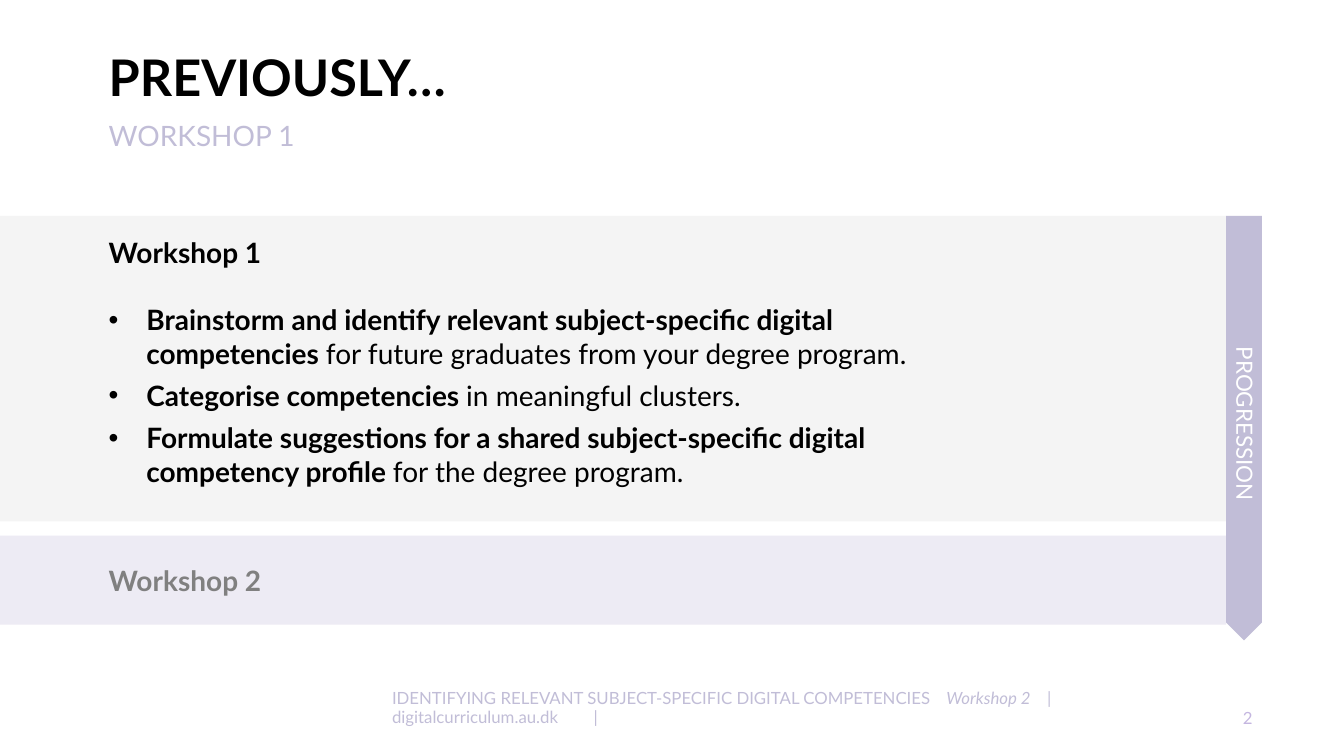
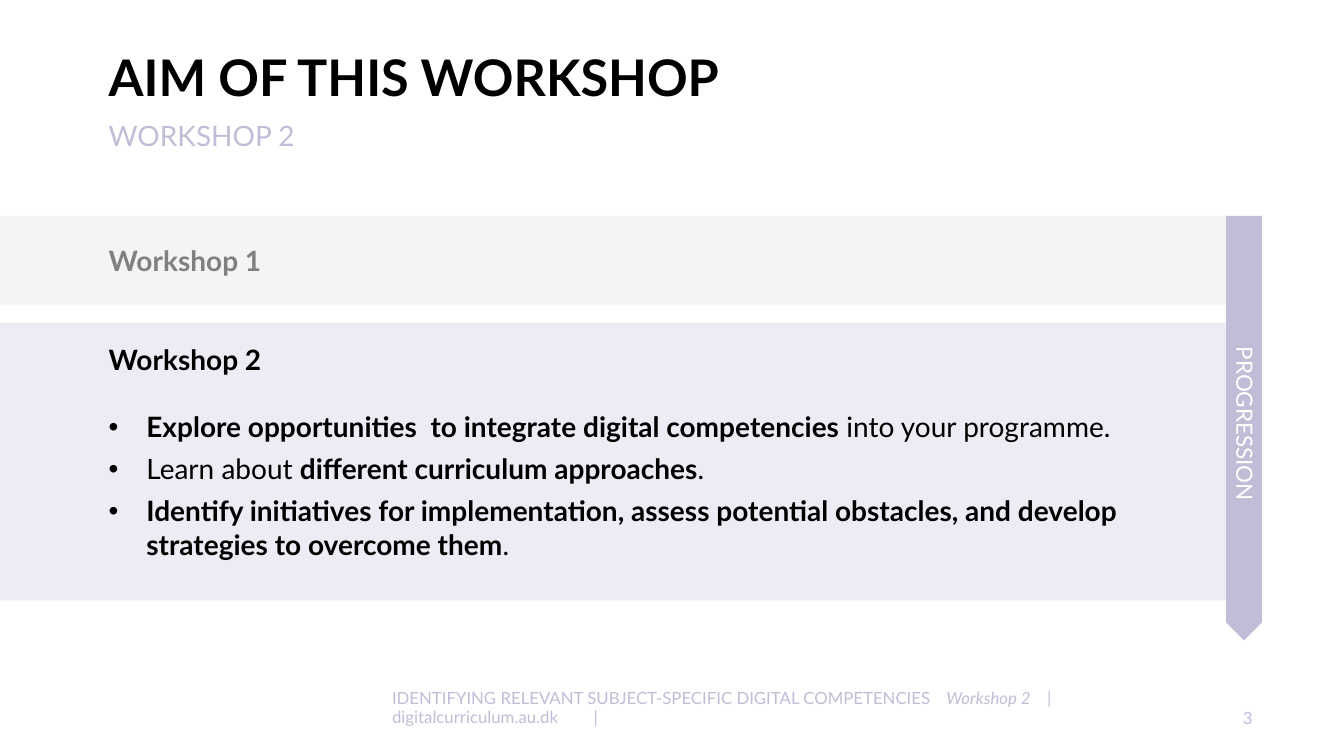
from lxml import etree
from pptx import Presentation
from pptx.dml.color import RGBColor
from pptx.enum import shapes, text
from pptx.oxml.ns import qn
from pptx.util import Cm, Pt

FONT = "Lato"
BLACK, WHITE, MUTED = "000000", "FFFFFF", "808080"
LILAC, NUMBER_LILAC = "C1BDD7", "C4B6E0"
BAND_FILLS = ["F4F4F4", "EDEBF4"]
MARGIN, CONTENT_WIDTH = 2.74, 28.4
BANDS_TOP, BANDS_WIDTH, CLOSED_HEIGHT = 5.44, 30.9, 2.24
BAND_INSET, BULLET_HANG = 0.8, 0.95
ARROW_LENGTH, ARROW_THICKNESS = 10.7, 0.9
FOOTER_LEFT, FOOTER_BOTTOM, FOOTER_HEIGHT = 9.88, 18.34, 0.5
FOOTER_TABS = [13.81, 16.3, 16.75, 21.13]


def write(frame, runs, size=20, color=BLACK, first=False, align="LEFT",
          spacing=None, before=0, after=0, indent=0, bullet=False, tabs=()):
    paragraph = frame.paragraphs[0] if first else frame.add_paragraph()
    properties = paragraph._p.get_or_add_pPr()
    properties.set("marL", str(Cm(indent + bullet * BULLET_HANG)))
    properties.set("indent", str(-Cm(bullet * BULLET_HANG)))
    if bullet:
        etree.SubElement(properties, qn("a:buFont"), typeface="Arial")
        etree.SubElement(properties, qn("a:buChar"), char="•")
    if tabs:
        stops = etree.SubElement(properties, qn("a:tabLst"))
        for stop in tabs:
            etree.SubElement(stops, qn("a:tab"), pos=str(Cm(stop)), algn="l")
    paragraph.alignment = getattr(text.PP_ALIGN, align)
    paragraph.line_spacing = spacing
    paragraph.space_before, paragraph.space_after = Pt(before), Pt(after)
    for words, style in runs:
        run = paragraph.add_run()
        run.text = words
        run.font.name, run.font.size = FONT, Pt(size)
        run.font.color.rgb = RGBColor.from_string(color)
        run.font.bold, run.font.italic = style == "bold", style == "italic"


def place(slide, left, top, width, height, kind=None, fill=None, anchor="BOTTOM"):
    box = [Cm(length) for length in (left, top, width, height)]
    if kind is None:
        part = slide.shapes.add_textbox(*box)
    else:
        part = slide.shapes.add_shape(kind, *box)
        part.shadow.inherit = False
        part.fill.solid()
        part.fill.fore_color.rgb = RGBColor.from_string(fill)
        part.line.fill.background()
    frame = part.text_frame
    frame.word_wrap = True
    frame.vertical_anchor = getattr(text.MSO_ANCHOR, anchor)
    frame.margin_left = frame.margin_right = frame.margin_top = frame.margin_bottom = 0
    return part


workshops = [
    {
        "title": "PREVIOUSLY…", "open_height": 7.7, "gap": 0.36, "right_inset": 7,
        "goals": [
            [("Brainstorm and identify relevant subject-specific digital competencies ", "bold"),
             ("for future graduates from your degree program.", "")],
            [("Categorise competencies ", "bold"), ("in meaningful clusters.", "")],
            [("Formulate suggestions for a shared subject-specific digital competency profile ", "bold"),
             ("for the degree program.", "")],
        ],
    },
    {
        "title": "AIM OF THIS WORKSHOP", "open_height": 7, "gap": 0.45, "right_inset": 0.5,
        "goals": [
            [("Explore opportunities  to integrate digital competencies ", "bold"),
             ("into your programme.", "")],
            [("Learn about ", ""), ("different curriculum approaches", "bold"), (".", "")],
            [("Identify initiatives for implementation, assess potential obstacles, "
              "and develop strategies to overcome them", "bold"), (".", "")],
        ],
    },
]

deck = Presentation()
deck.slide_width, deck.slide_height = Cm(33.87), Cm(19.05)

for current, workshop in enumerate(workshops):
    slide = deck.slides.add_slide(deck.slide_layouts[6])

    heading = place(slide, MARGIN, 0.89, CONTENT_WIDTH, 2.95).text_frame
    write(heading, [(workshop["title"], "bold")], size=36, first=True, spacing=0.89)
    write(heading, [(f"WORKSHOP {current + 1}", "")], color=LILAC, spacing=0.89, before=11)

    band_top = BANDS_TOP
    for number, fill in enumerate(BAND_FILLS):
        is_open = number == current
        height = workshop["open_height"] if is_open else CLOSED_HEIGHT
        band = place(slide, 0, band_top, BANDS_WIDTH, height, shapes.MSO_SHAPE.RECTANGLE,
                     fill, "TOP" if is_open else "MIDDLE").text_frame
        band.margin_left, band.margin_right = Cm(BAND_INSET), Cm(workshop["right_inset"])
        band.margin_top = band.margin_bottom = Cm(0.5)
        indent = MARGIN - BAND_INSET
        write(band, [(f"Workshop {number + 1}", "bold")], color=BLACK if is_open else MUTED,
              first=True, after=24 if is_open else 0, indent=indent)
        if is_open:
            for goal in workshop["goals"]:
                write(band, goal, after=6, indent=indent, bullet=True)
        band_top += height + workshop["gap"]

    overhang = (ARROW_LENGTH - ARROW_THICKNESS) / 2
    progression = place(slide, BANDS_WIDTH - overhang, BANDS_TOP + overhang, ARROW_LENGTH,
                        ARROW_THICKNESS, shapes.MSO_SHAPE.PENTAGON, LILAC, "MIDDLE")
    progression.rotation = 90
    write(progression.text_frame, [("PROGRESSION", "")], size=16, color=WHITE,
          first=True, align="CENTER", spacing=0.95)

    footer_top = FOOTER_BOTTOM - FOOTER_HEIGHT
    footer = place(slide, FOOTER_LEFT, footer_top, 21.8, FOOTER_HEIGHT).text_frame
    write(footer, [("IDENTIFYING RELEVANT SUBJECT-SPECIFIC DIGITAL COMPETENCIES\t", ""),
                   ("Workshop 2\t|\t", "italic"), ("digitalcurriculum.au.dk\t|", "")],
          size=12, color=LILAC, first=True, spacing=0.95, tabs=FOOTER_TABS)
    page = place(slide, 31.32, footer_top, 2.54, FOOTER_HEIGHT).text_frame
    write(page, [(str(current + 2), "")], size=12, color=NUMBER_LILAC, first=True, spacing=Pt(12))

deck.save("out.pptx")
